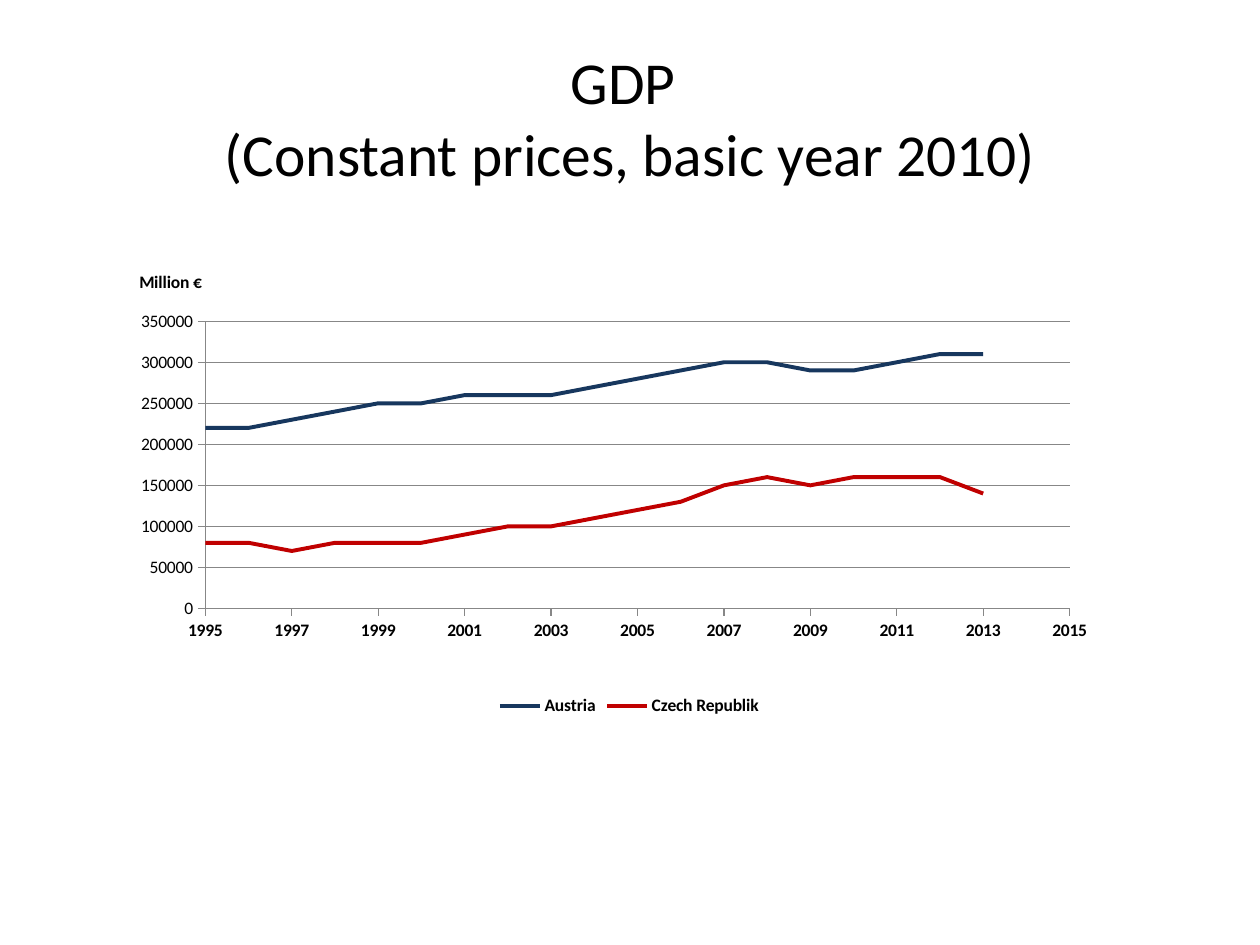
from dataclasses import dataclass

from pptx import Presentation
from pptx.chart.data import XyChartData
from pptx.dml.color import RGBColor
from pptx.enum.chart import XL_CHART_TYPE as ChartType
from pptx.enum.chart import XL_LEGEND_POSITION as LegendPos
from pptx.enum.chart import XL_MARKER_STYLE as Marker
from pptx.enum.chart import XL_TICK_MARK as Tick
from pptx.enum.text import MSO_ANCHOR as Anchor
from pptx.enum.text import PP_ALIGN as Align
from pptx.oxml import parse_xml
from pptx.oxml.ns import nsdecls, qn
from pptx.util import Inches, Length, Pt

FONT = "Calibri"
BLACK = "000000"
GRAY = "878787"
FIRST_YEAR = 1995
LAST_YEAR = 2015
GDP_UNIT = 10000
CHART_W = Inches(7.87)
CHART_H = Inches(3.94)


@dataclass
class Country:
    name: str
    color: str
    gdp: list[int]


COUNTRIES = [
    Country("Austria", "17375E",
            [22, 22, 23, 24, 25, 25, 26, 26, 26, 27,
             28, 29, 30, 30, 29, 29, 30, 31, 31]),
    Country("Czech Republik", "C00000",
            [8, 8, 7, 8, 8, 8, 9, 10, 10, 11,
             12, 13, 15, 16, 15, 16, 16, 16, 14]),
]


def rgb(color: str) -> RGBColor:
    return RGBColor.from_string(color)


def style_font(font, size: float, bold: bool = False) -> None:
    font.name = FONT
    font.size = Pt(size)
    font.bold = bold
    font.color.rgb = rgb(BLACK)


def style_line(line, color: str, width: float) -> None:
    line.color.rgb = rgb(color)
    line.width = Pt(width)


def set_layout(parent, index: int, inner: bool = False, **lengths: Length) -> None:
    for old in parent.findall(qn("c:layout")):
        parent.remove(old)
    target = '<c:layoutTarget val="inner"/>' if inner else ""
    modes = "".join(f'<c:{key}Mode val="edge"/>' for key in ("x", "y"))
    sizes = {"x": CHART_W, "y": CHART_H, "w": CHART_W, "h": CHART_H}
    values = "".join(f'<c:{key} val="{length / sizes[key]}"/>'
                     for key, length in lengths.items())
    parent.insert(index, parse_xml(
        f'<c:layout {nsdecls("c")}><c:manualLayout>{target}{modes}{values}'
        "</c:manualLayout></c:layout>"))


def add_title(slide, lines: list[str]) -> None:
    s = slide.shapes.add_textbox(Inches(0.5), Inches(0.3), Inches(9), Inches(1.25))
    tf = s.text_frame
    tf.word_wrap = True
    tf.vertical_anchor = Anchor.MIDDLE
    p = tf.paragraphs[0]
    p.alignment = Align.CENTER
    for i, line in enumerate(lines):
        if i:
            p.add_line_break()
        r = p.add_run()
        r.text = line
        style_font(r.font, 34)


def style_axis(axis, low: float, high: float, step: float, bold: bool) -> None:
    axis.minimum_scale = low
    axis.maximum_scale = high
    axis.major_unit = step
    axis.major_tick_mark = Tick.OUTSIDE
    axis.minor_tick_mark = Tick.NONE
    axis.tick_labels.number_format = "General"
    axis.tick_labels.number_format_is_linked = False
    style_font(axis.tick_labels.font, 10, bold)
    style_line(axis.format.line, GRAY, 0.75)


def add_unit_title(axis, text: str) -> None:
    title = axis.axis_title
    tf = title.text_frame
    r = tf.paragraphs[0].add_run()
    r.text = text
    style_font(r.font, 10, True)
    body = tf._txBody.find(qn("a:bodyPr"))
    body.set("rot", "0")
    body.set("vert", "horz")
    set_layout(title._element, 1, x=Inches(0.02), y=Inches(0.34))


def add_gdp_chart(slide, countries: list[Country]) -> None:
    data = XyChartData()
    for country in countries:
        series = data.add_series(country.name)
        for year, gdp in enumerate(country.gdp, FIRST_YEAR):
            series.add_data_point(year, gdp * GDP_UNIT)
    chart = slide.shapes.add_chart(
        ChartType.XY_SCATTER_LINES_NO_MARKERS, Inches(1.06), Inches(1.78),
        CHART_W, CHART_H, data).chart
    style_font(chart.font, 10)
    chart.has_title = False
    chart.has_legend = True
    chart.legend.position = LegendPos.BOTTOM
    chart.legend.include_in_layout = False
    style_font(chart.legend.font, 10, True)

    plot = chart.plots[0]
    plot.vary_by_categories = False
    for series, country in zip(plot.series, countries):
        series.smooth = False
        series.marker.style = Marker.NONE
        style_line(series.format.line, country.color, 2.25)

    years, amounts = chart.category_axis, chart.value_axis
    style_axis(years, FIRST_YEAR, LAST_YEAR, 2, True)
    style_axis(amounts, 0, 350000, 50000, False)
    years.has_major_gridlines = False
    amounts.has_major_gridlines = True
    style_line(amounts.major_gridlines.format.line, GRAY, 0.75)
    add_unit_title(amounts, "Million €")
    plot_area = chart._chartSpace.chart.plotArea
    set_layout(plot_area, 0, inner=True, x=Inches(0.57), y=Inches(0.77),
               w=Inches(6.86), h=Inches(2.28))


def main() -> None:
    prs = Presentation()
    prs.slide_width = Inches(10)
    prs.slide_height = Inches(7.5)
    slide = prs.slides.add_slide(prs.slide_layouts[6])
    add_title(slide, ["GDP ", "(Constant prices, basic year 2010)"])
    add_gdp_chart(slide, COUNTRIES)
    prs.save("out.pptx")


if __name__ == "__main__":
    main()
